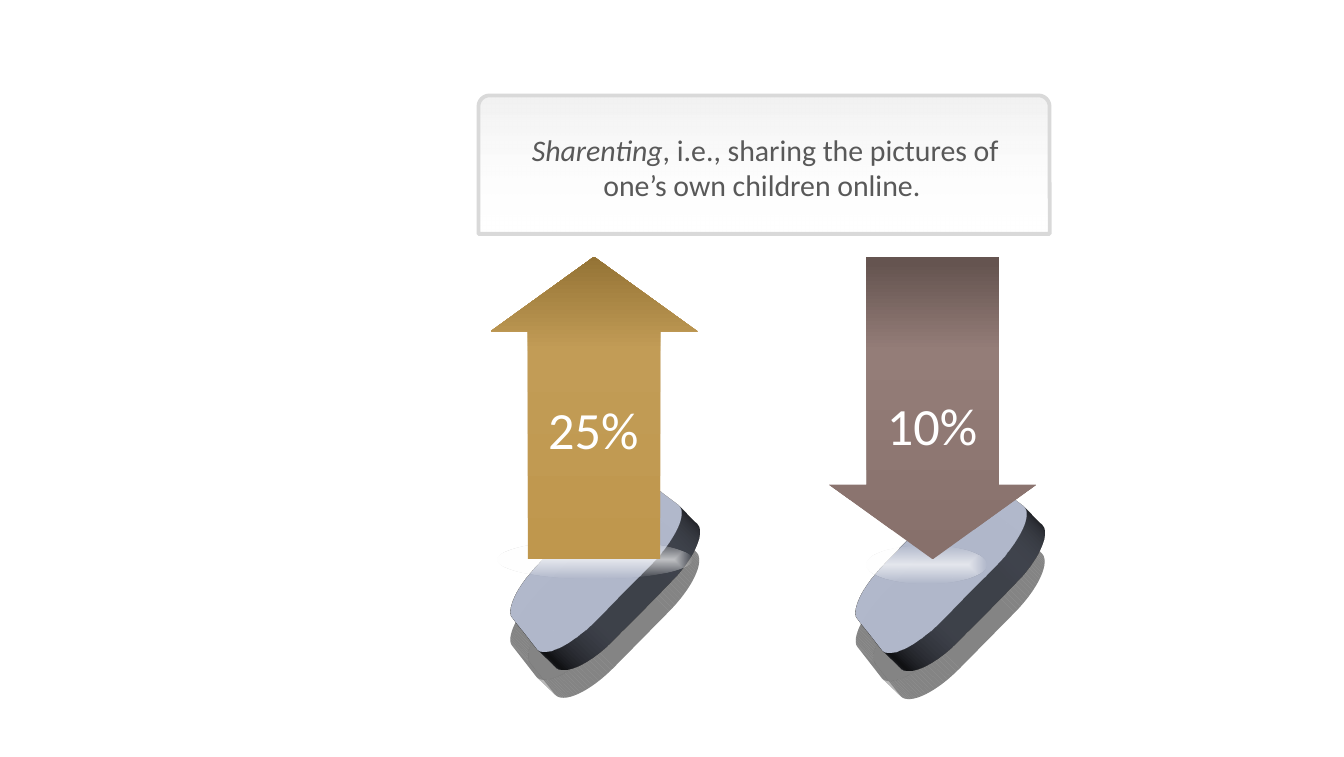
from dataclasses import dataclass

from lxml import etree
from pptx import Presentation
from pptx.dml.color import RGBColor
from pptx.enum.shapes import MSO_SHAPE
from pptx.enum.text import PP_ALIGN
from pptx.oxml.ns import qn
from pptx.util import Inches, Pt


@dataclass(frozen=True)
class Theme:
    font: str = "Calibri"
    caption_size: int = 16
    percent_size: int = 28
    line_spacing: int = 19
    text: str = "595959"
    white: str = "FFFFFF"
    border: str = "D9D9D9"
    panel: str = "F2F2F2"
    pedestal: str = "7D8496"
    shadow: str = "000000"
    glow: tuple = ((0, "FFFFFF", 67), (100, "FFFFFF", 0))
    rise: tuple = ((0, "BF974D", 100), (69, "C29C56", 100), (100, "947335", 100))
    fall: tuple = ((0, "87706B", 100), (69, "947D78", 100), (98, "655450", 100))


theme = Theme()


def paint(shape, stops, angle=None):
    """Fill with (position, colour, opacity) stops; without an angle they spread from the centre."""
    shape.shadow.inherit = False
    shape.line.fill.background()
    shape.fill.gradient()
    gradient = shape._element.spPr.find(qn("a:gradFill"))
    for child in list(gradient):
        gradient.remove(child)
    stop_list = etree.SubElement(gradient, qn("a:gsLst"))
    for position, colour, opacity in stops:
        stop = etree.SubElement(stop_list, qn("a:gs"), pos=str(position * 1000))
        rgb = etree.SubElement(stop, qn("a:srgbClr"), val=colour)
        if opacity < 100:
            etree.SubElement(rgb, qn("a:alpha"), val=str(opacity * 1000))
    if angle is None:
        spread = etree.SubElement(gradient, qn("a:path"), path="shape")
        etree.SubElement(spread, qn("a:fillToRect"), l="50000", t="50000", r="50000", b="50000")
    else:
        etree.SubElement(gradient, qn("a:lin"), ang=str(angle * 60000), scaled="0")


def add_label(left, top, width, height, runs, size, colour):
    """Add centred text from (wording, italic) runs."""
    frame = slide.shapes.add_textbox(
        Inches(left), Inches(top), Inches(width), Inches(height)).text_frame
    frame.word_wrap = True
    paragraph = frame.paragraphs[0]
    paragraph.alignment = PP_ALIGN.CENTER
    paragraph.line_spacing = Pt(theme.line_spacing)
    for wording, italic in runs:
        run = paragraph.add_run()
        run.text = wording
        run.font.name = theme.font
        run.font.size = Pt(size)
        run.font.italic = italic
        run.font.color.rgb = RGBColor.from_string(colour)


presentation = Presentation()
presentation.slide_width = Inches(10)
presentation.slide_height = Inches(5.63)
slide = presentation.slides.add_slide(presentation.slide_layouts[6])

# Each column: pedestal corner, glow box, arrow left, rotation, stops, percentage and its corner
columns = [
    ((3.68, 3.31), (3.70, 4.02, 1.45), 3.65, 0, theme.rise, "25%", (3.95, 3.11)),
    ((6.25, 3.32), (6.45, 4.06, 0.89), 6.17, 180, theme.fall, "10%", (6.47, 3.08)),
]
for pedestal_at, glow_box, arrow_left, rotation, stops, percent, percent_at in columns:
    pedestal = slide.shapes.add_shape(MSO_SHAPE.ROUNDED_RECTANGLE, Inches(pedestal_at[0]),
                                      Inches(pedestal_at[1]), Inches(1.46), Inches(1.75))
    pedestal.adjustments[0] = 0.31
    pedestal.rotation = 314.6
    pedestal.fill.solid()
    pedestal.fill.fore_color.rgb = RGBColor.from_string(theme.pedestal)
    pedestal.line.fill.background()
    pedestal.shadow.inherit = False
    properties = pedestal._element.spPr

    # Soft shadow below, then the tilted camera and the thickness of the slab
    shadow = etree.SubElement(properties.find(qn("a:effectLst")), qn("a:outerShdw"),
                              blurRad=str(Pt(20)), dist=str(Pt(15)), dir="5400000",
                              algn="t", rotWithShape="0")
    shade = etree.SubElement(shadow, qn("a:srgbClr"), val=theme.shadow)
    etree.SubElement(shade, qn("a:alpha"), val="28000")
    scene = etree.SubElement(properties, qn("a:scene3d"))
    camera = etree.SubElement(scene, qn("a:camera"), prst="perspectiveRelaxed")
    etree.SubElement(camera, qn("a:rot"), lat=str(290 * 60000), lon="0", rev="0")
    etree.SubElement(scene, qn("a:lightRig"), rig="threePt", dir="t")
    etree.SubElement(properties, qn("a:sp3d"), extrusionH=str(Inches(0.2)))

    glow_left, glow_top, glow_width = glow_box
    glow = slide.shapes.add_shape(MSO_SHAPE.OVAL, Inches(glow_left), Inches(glow_top),
                                  Inches(glow_width), Inches(0.28))
    paint(glow, theme.glow)

    arrow = slide.shapes.add_shape(MSO_SHAPE.UP_ARROW, Inches(arrow_left), Inches(1.91),
                                   Inches(1.54), Inches(2.25))
    arrow.adjustments[0] = 0.64
    arrow.adjustments[1] = 0.36
    arrow.rotation = rotation
    paint(arrow, stops, (270 + rotation) % 360)
    add_label(*percent_at, 0.93, 0.37, [(percent, False)], theme.percent_size, theme.white)

caption_panel = slide.shapes.add_shape(MSO_SHAPE.ROUND_2_SAME_RECTANGLE, Inches(3.56),
                                       Inches(0.71), Inches(4.25), Inches(1.03))
caption_panel.adjustments[0] = 0.08
caption_panel.adjustments[1] = 0
paint(caption_panel, ((0, theme.panel, 100), (100, theme.white, 0)), 90)
caption_panel.line.color.rgb = RGBColor.from_string(theme.border)
caption_panel.line.width = Pt(2)
add_label(3.70, 0.93, 3.99, 0.63,
          [("Sharenting", True),
           (", i.e., sharing the pictures of one’s own children online. ", False)],
          theme.caption_size, theme.text)

presentation.save("out.pptx")
